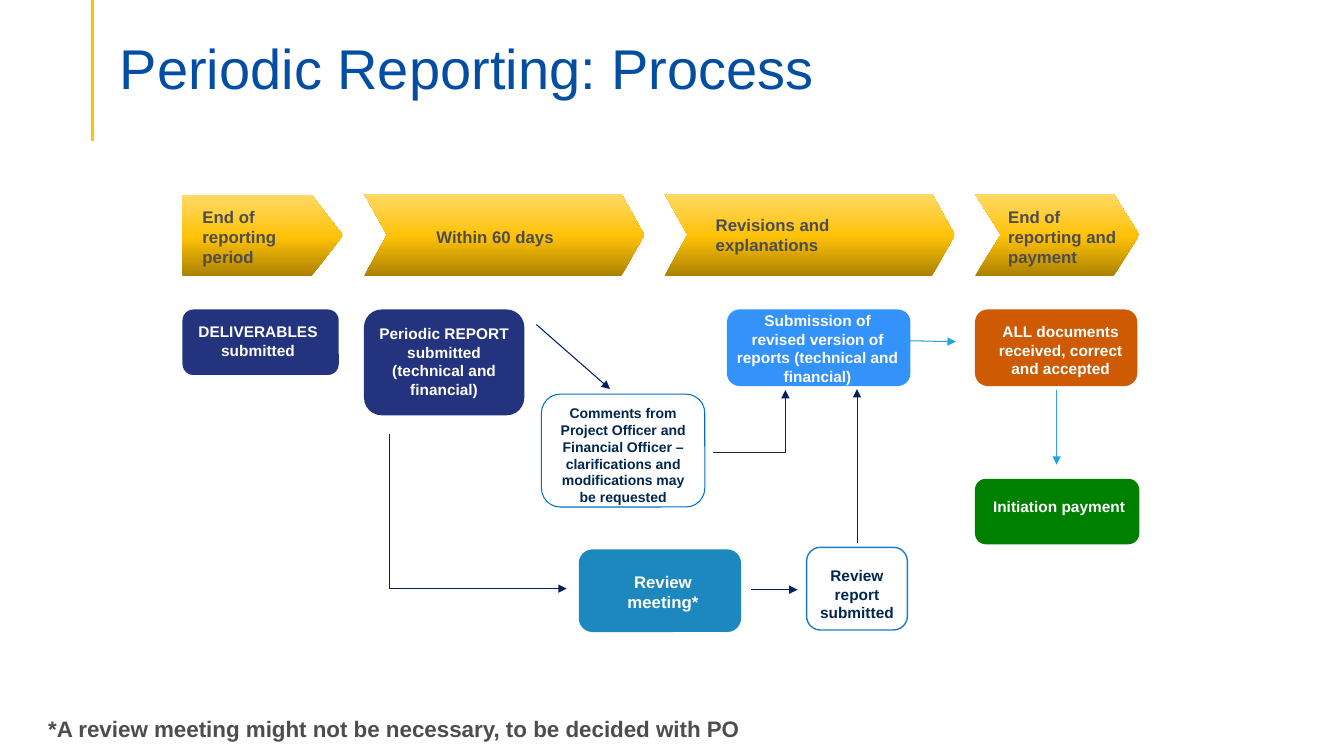
from dataclasses import dataclass

from lxml import etree
from pptx import Presentation
from pptx import util as u
from pptx.dml.color import RGBColor
from pptx.enum import shapes, text
from pptx.oxml.ns import qn

ROUNDED = shapes.MSO_SHAPE.ROUNDED_RECTANGLE
PROCESS = shapes.MSO_SHAPE.FLOWCHART_ALTERNATE_PROCESS
CHEVRON = shapes.MSO_SHAPE.CHEVRON
PENTAGON = shapes.MSO_SHAPE.PENTAGON
LEFT, CENTER = text.PP_ALIGN.LEFT, text.PP_ALIGN.CENTER
Box = tuple[float, float, float, float]


@dataclass(frozen=True)
class Theme:
    font: str = "Arial"
    title: str = "034EA2"
    gold: str = "FFC000"
    grey: str = "4D4D4D"
    white: str = "FFFFFF"
    ink: str = "012751"
    navy: str = "24337E"
    azure: str = "3492FB"
    teal: str = "1C88BE"
    orange: str = "CE5B04"
    green: str = "008000"
    comment_line: str = "0070C0"
    review_line: str = "1C7CCA"
    arrow: str = "002060"
    light_arrow: str = "25A1DF"
    dark_line: str = "262626"
    gradient: tuple = ((0, "AB8100"), (48, "FFC208"), (100, "FFD966"))
    title_size: int = 40
    note_size: int = 16
    phase_size: int = 12
    step_size: int = 11
    comment_size: int = 10


T = Theme()


@dataclass(frozen=True)
class Phase:
    kind: int
    box: Box
    point: float
    label: str
    label_box: Box


@dataclass(frozen=True)
class Step:
    kind: int
    box: Box
    fill: str
    label: str
    label_box: Box | None = None  # None puts the label inside the shape
    size: int = T.step_size
    color: str = T.white
    line: str | None = None
    weight: float = 1


@dataclass(frozen=True)
class Link:
    start: tuple[float, float]
    end: tuple[float, float]
    color: str = T.arrow
    weight: float = 0.75
    head: bool = True


PHASES = [
    Phase(PENTAGON, (1.81, 1.93, 1.59, 0.81), 0.385,
          "End of reporting period", (1.91, 2, 1.26, 0.71)),
    Phase(CHEVRON, (3.61, 1.92, 2.78, 0.82), 0.279,
          "Within 60 days", (4.23, 2.2, 1.9, 0.3)),
    Phase(CHEVRON, (6.59, 1.92, 2.88, 0.82), 0.279,
          "Revisions and explanations", (7, 2.08, 2.12, 0.5)),
    Phase(CHEVRON, (9.67, 1.92, 1.63, 0.82), 0.313,
          "End of reporting and payment", (9.9, 2, 1.39, 0.71)),
]

STEPS = [
    Step(PROCESS, (1.81, 3.07, 1.55, 0.65), T.navy,
         "DELIVERABLES submitted", (1.81, 3.15, 1.5, 0.42)),
    Step(PROCESS, (3.61, 3.07, 1.59, 1.05), T.navy,
         "Periodic REPORT\nsubmitted (technical and financial)", (3.63, 3.17, 1.55, 0.85)),
    Step(ROUNDED, (5.37, 3.91, 1.62, 1.12), T.white,
         "Comments from\nProject Officer and Financial Officer – "
         "clarifications and modifications may be requested",
         size=T.comment_size, color=T.ink, line=T.comment_line, weight=0.75),
    Step(PROCESS, (7.21, 3.07, 1.82, 0.76), T.azure,
         "Submission of revised version of reports (technical and financial)",
         (7.21, 3.04, 1.8, 0.72)),
    Step(PROCESS, (5.74, 5.45, 1.61, 0.82), T.teal,
         "Review meeting*", (5.85, 5.62, 1.45, 0.5), T.phase_size),
    Step(ROUNDED, (8, 5.43, 1, 0.82), T.white,
         "Review report submitted", (8, 5.57, 1, 0.63), color=T.ink, line=T.review_line),
    Step(PROCESS, (9.67, 3.07, 1.61, 0.76), T.orange,
         "ALL documents received, correct and accepted", (9.77, 3.15, 1.5, 0.48)),
    Step(PROCESS, (9.67, 4.75, 1.63, 0.65), T.green,
         "Initiation payment", (9.7, 4.88, 1.61, 0.4)),
]

LINKS = [
    Link((0.92, 0), (0.92, 1.4), T.gold, 2.25, head=False),
    Link((5.32, 3.22), (6.05, 3.86)),
    Link((3.86, 4.31), (3.86, 5.84), head=False),
    Link((3.86, 5.84), (5.62, 5.84), weight=0.5),
    Link((7.45, 5.85), (7.91, 5.85)),
    Link((8.5, 5.39), (8.5, 3.86), weight=0.5),
    Link((7.07, 4.49), (7.79, 4.49), T.dark_line, 0.5, head=False),
    Link((7.79, 4.49), (7.79, 3.87), weight=0.5),
    Link((9, 3.38), (9.48, 3.39), T.light_arrow),
    Link((10.48, 3.87), (10.48, 4.61), T.light_arrow),
]


def inches(values) -> list:
    return [u.Inches(v) for v in values]


def write(tf, label: str, size: int, color: str, align=LEFT, bold: bool = True,
          anchor=text.MSO_ANCHOR.TOP) -> None:
    frame = {"word_wrap": True, "auto_size": text.MSO_AUTO_SIZE.NONE, "vertical_anchor": anchor}
    for name, value in frame.items():
        setattr(tf, name, value)
    tf.text = label
    for p in tf.paragraphs:
        p.alignment = align
        for r in p.runs:
            for name, value in {"name": T.font, "size": u.Pt(size), "bold": bold}.items():
                setattr(r.font, name, value)
            r.font.color.rgb = RGBColor.from_string(color)


def add_label(slide, box: Box, label: str, size: int, color: str, align=LEFT) -> None:
    write(slide.shapes.add_textbox(*inches(box)).text_frame, label, size, color, align)


def add_phase(slide, phase: Phase) -> None:
    sp = slide.shapes.add_shape(phase.kind, *inches(phase.box))
    sp.shadow.inherit = False
    sp.adjustments[0] = phase.point
    sp.line.fill.background()
    sp.fill.gradient()
    sp.fill.gradient_angle = 90
    stops = sp._element.spPr.find(qn("a:gradFill")).find(qn("a:gsLst"))
    for stop in list(stops):
        stops.remove(stop)
    for pos, color in T.gradient:
        stop = etree.SubElement(stops, qn("a:gs"), pos=str(pos * 1000))
        etree.SubElement(stop, qn("a:srgbClr"), val=color)
    add_label(slide, phase.label_box, phase.label, T.phase_size, T.grey)


def add_step(slide, step: Step) -> None:
    sp = slide.shapes.add_shape(step.kind, *inches(step.box))
    sp.shadow.inherit = False
    sp.fill.solid()
    sp.fill.fore_color.rgb = RGBColor.from_string(step.fill)
    if step.line:
        sp.line.color.rgb = RGBColor.from_string(step.line)
        sp.line.width = u.Pt(step.weight)
    else:
        sp.line.fill.background()
    if step.label_box:
        add_label(slide, step.label_box, step.label, step.size, step.color, CENTER)
    else:
        write(sp.text_frame, step.label, step.size, step.color, CENTER)


def add_link(slide, link: Link) -> None:
    cxn = slide.shapes.add_connector(
        shapes.MSO_CONNECTOR.STRAIGHT, *inches(link.start + link.end))
    cxn.line.color.rgb = RGBColor.from_string(link.color)
    cxn.line.width = u.Pt(link.weight)
    if link.head:
        etree.SubElement(cxn.line._get_or_add_ln(), qn("a:tailEnd"), type="triangle")
    etree.SubElement(cxn._element.spPr, qn("a:effectLst"))


def main() -> None:
    prs = Presentation()
    prs.slide_width, prs.slide_height = inches((13.33, 7.5))
    slide = prs.slides.add_slide(prs.slide_layouts[5])

    # Title
    title = slide.shapes.title
    title.left, title.top, title.width, title.height = inches((1.01, 0.14, 10.29, 1.06))
    write(title.text_frame, "Periodic Reporting: Process", T.title_size, T.title,
          bold=False, anchor=text.MSO_ANCHOR.MIDDLE)
    title.text_frame.margin_left = u.Inches(0.18)

    # Phases, steps and the lines between them
    for draw, items in ((add_phase, PHASES), (add_step, STEPS), (add_link, LINKS)):
        for item in items:
            draw(slide, item)

    # Footnote
    add_label(slide, (0.38, 7.05, 8.31, 0.37),
              "*A review meeting might not be necessary, to be decided with PO",
              T.note_size, T.grey)
    prs.save("out.pptx")


if __name__ == "__main__":
    main()
